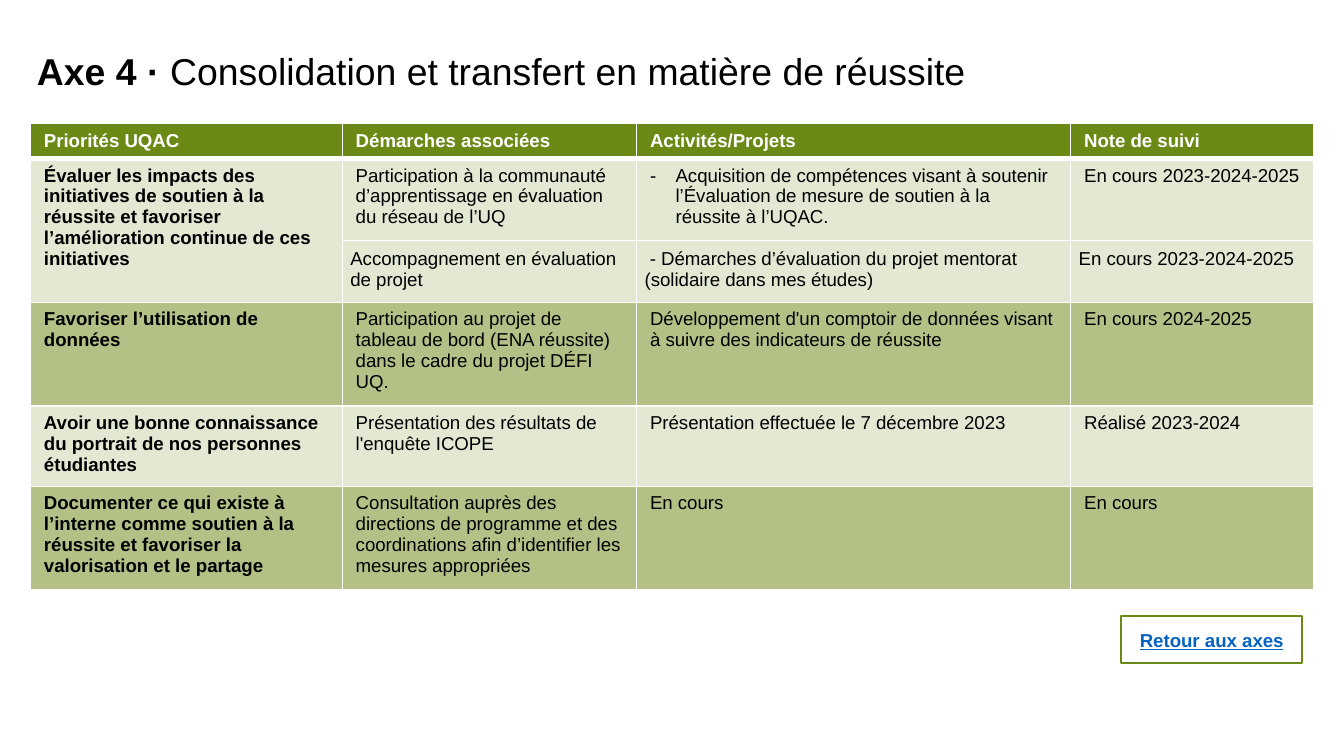
"""Build the slide on axis 4: a follow-up table and a return button."""
from lxml import etree
from pptx import Presentation
from pptx.dml.color import RGBColor
from pptx.enum.shapes import MSO_SHAPE
from pptx.enum.text import MSO_ANCHOR, MSO_AUTO_SIZE, PP_ALIGN
from pptx.oxml.ns import qn
from pptx.util import Inches, Pt

RECT = MSO_SHAPE.RECTANGLE
MIDDLE = MSO_ANCHOR.MIDDLE
FIXED = MSO_AUTO_SIZE.NONE
LEFT, CENTER = PP_ALIGN.LEFT, PP_ALIGN.CENTER

GREEN = RGBColor(0x6B, 0x8A, 0x15)
PALE = RGBColor(0xE3, 0xE8, 0xD3)
SAGE = RGBColor(0xB3, 0xC1, 0x86)
WHITE = RGBColor(0xFF, 0xFF, 0xFF)
BLACK = RGBColor(0, 0, 0)
BLUE = RGBColor(0x05, 0x63, 0xC1)

WIDTH = Inches(10)
HEIGHT = WIDTH * 9 // 16
UNIT = WIDTH / 100

COLS = [23.2, 21.9, 32.3, 18.1]
ROWS = [2.6, 6.1, 4.6, 7.7, 6, 7.7]
FILLS = [GREEN, PALE, PALE, SAGE, PALE, SAGE]
TEXTS = [
    ["Priorités UQAC", "Démarches associées", "Activités/Projets", "Note de suivi"],
    ["Évaluer les impacts des initiatives de soutien à la réussite et favoriser "
     "l’amélioration continue de ces initiatives",
     "Participation à la communauté d’apprentissage en évaluation du réseau de l’UQ",
     "Acquisition de compétences visant à soutenir l’Évaluation de mesure de "
     "soutien à la réussite à l’UQAC.",
     "En cours 2023-2024-2025"],
    ["", "Accompagnement en évaluation de projet",
     " - Démarches d’évaluation du projet mentorat (solidaire dans mes études)",
     "En cours 2023-2024-2025"],
    ["Favoriser l’utilisation de données",
     "Participation au projet de tableau de bord (ENA réussite) dans le cadre du "
     "projet DÉFI UQ.",
     "Développement d'un comptoir de données visant à suivre des indicateurs de réussite",
     "En cours 2024-2025"],
    ["Avoir une bonne connaissance du portrait de nos personnes étudiantes",
     "Présentation des résultats de l'enquête ICOPE",
     "Présentation effectuée le 7 décembre 2023", "Réalisé 2023-2024"],
    ["Documenter ce qui existe à l’interne comme soutien à la réussite et favoriser "
     "la valorisation et le partage",
     "Consultation auprès des directions de programme et des coordinations afin "
     "d’identifier les mesures appropriées",
     "En cours", "En cours"],
]


def grid(*nums):
    return [round(num * UNIT) for num in nums]


def style(run, size, color, bold):
    font = run.font
    font.name, font.size, font.bold = "Arial", Pt(size), bold
    font.color.rgb = color


deck = Presentation()
deck.slide_width, deck.slide_height = WIDTH, HEIGHT
slide = deck.slides.add_slide(deck.slide_layouts[5])

title = slide.shapes.title
title.left, title.top, title.width, title.height = grid(1.75, 3.05, 96, 4.4)
frame = title.text_frame
frame.auto_size, frame.vertical_anchor, frame.word_wrap = FIXED, MIDDLE, True
line = frame.paragraphs[0]
line.alignment = LEFT
for text, bold in [("Axe 4 · ", True),
                   ("Consolidation et transfert en matière de réussite", False)]:
    run = line.add_run()
    run.text = text
    style(run, 20, BLACK, bold)

box = grid(2.27, 9.2, sum(COLS), sum(ROWS))
table = slide.shapes.add_table(len(ROWS), len(COLS), *box).table
for col, width in zip(table.columns, grid(*COLS)):
    col.width = width
for row, height in zip(table.rows, grid(*ROWS)):
    row.height = height
table.cell(1, 0).merge(table.cell(2, 0))

for r, (texts, fill) in enumerate(zip(TEXTS, FILLS)):
    for c, text in enumerate(texts):
        cell = table.cell(r, c)
        props = cell._tc.get_or_add_tcPr()
        for side in ("lnL", "lnR", "lnT", "lnB"):
            thick = (r, side) in [(0, "lnB"), (1, "lnT")]
            edge = etree.SubElement(props, qn("a:" + side), w=str(Pt(3 if thick else 1)))
            paint = etree.SubElement(edge, qn("a:solidFill"))
            etree.SubElement(paint, qn("a:srgbClr"), val=str(WHITE))
        cell.fill.solid()
        cell.fill.fore_color.rgb = fill
        if r == 2:
            pad = grid(0.6)[0]
            cell.margin_left = cell.margin_right = pad
            cell.margin_top = cell.margin_bottom = pad
        if text:
            cell.text_frame.text = text
            run = cell.text_frame.paragraphs[0].runs[0]
            style(run, 10, BLACK if r else WHITE, r == 0 or c == 0)

props = table.cell(1, 2).text_frame.paragraphs[0]._p.get_or_add_pPr()
dent = grid(1.9)[0]
props.set("marL", str(dent))
props.set("indent", str(-dent))
etree.SubElement(props, qn("a:buFont"), typeface="Arial")
etree.SubElement(props, qn("a:buChar"), char="-")

button = slide.shapes.add_shape(RECT, *grid(83.4, 45.85, 13.5, 3.5))
button.shadow.inherit = False
button.fill.solid()
button.fill.fore_color.rgb = WHITE
button.line.color.rgb = GREEN
button.line.width = Pt(1)
frame = button.text_frame
frame.text = "Retour aux axes"
frame.word_wrap, frame.vertical_anchor = True, MIDDLE
line = frame.paragraphs[0]
line.alignment = CENTER
style(line.runs[0], 10, BLUE, True)
line.runs[0].font.underline = True

deck.save("out.pptx")
